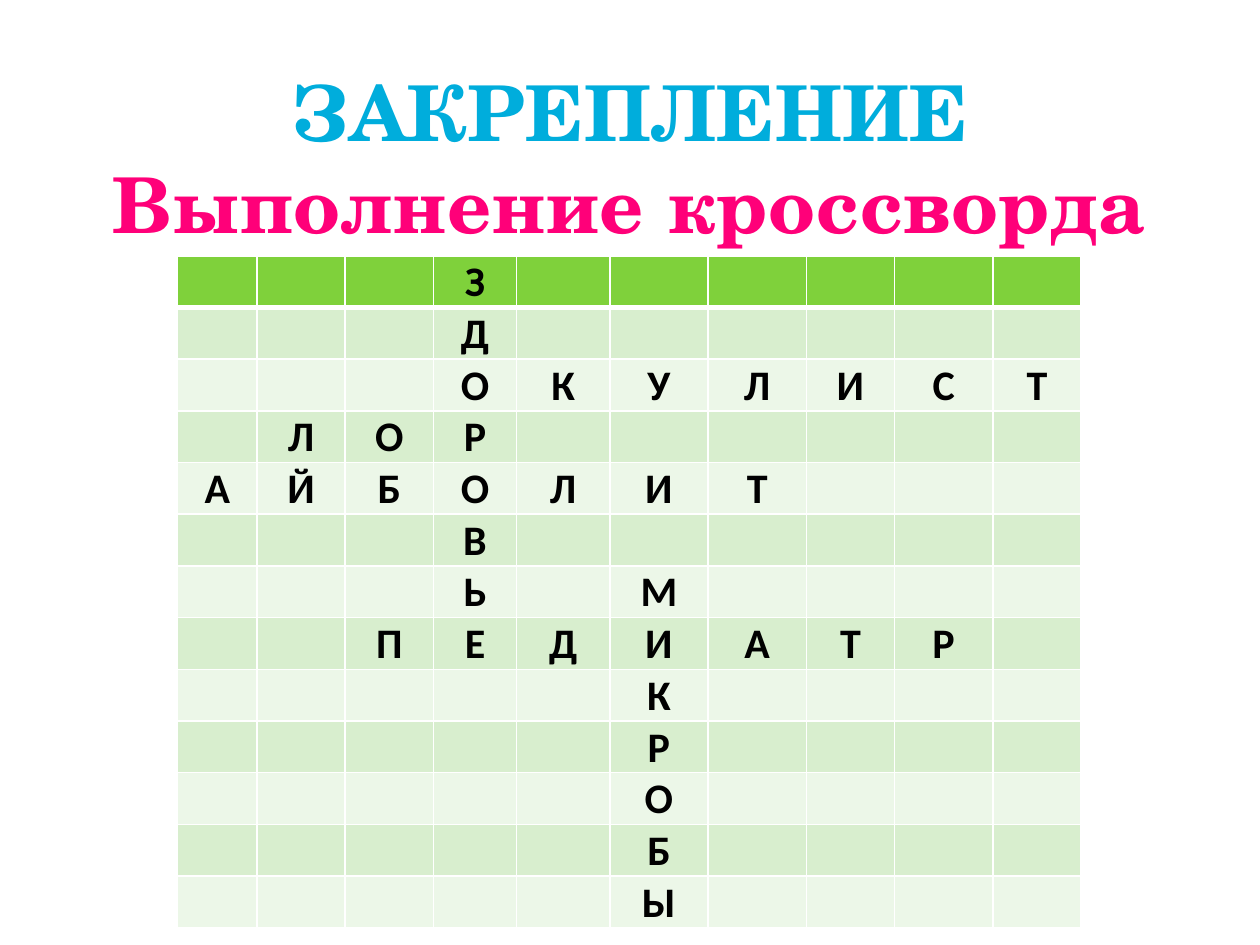
"""Crossword slide: a two-line heading above a 13 by 10 letter grid."""
from lxml import etree
from pptx import Presentation
from pptx.dml.color import RGBColor
from pptx.enum.text import MSO_ANCHOR, PP_ALIGN
from pptx.oxml.ns import qn
from pptx.util import Inches, Pt

CENTER = PP_ALIGN.CENTER
MIDDLE, BOTTOM = MSO_ANCHOR.MIDDLE, MSO_ANCHOR.BOTTOM


def rgb(value):
    return RGBColor.from_string(value)


def add_border(cell, side, width):
    ln = etree.SubElement(cell._tc.get_or_add_tcPr(), qn(f"a:ln{side}"), w=str(Pt(width)))
    fill = etree.SubElement(ln, qn("a:solidFill"))
    etree.SubElement(fill, qn("a:srgbClr"), val="FFFFFF")


prs = Presentation()
prs.slide_width, prs.slide_height = Inches(10), Inches(7.5)
s = prs.slides.add_slide(prs.slide_layouts[6])

sp = s.shapes.add_textbox(Inches(0.5), Inches(0.3), Inches(9), Inches(1.89))
tf = sp.text_frame
tf.word_wrap = True
tf.vertical_anchor = MIDDLE
p = tf.paragraphs[0]
p.alignment = CENTER
p.font.size, p.font.bold, p.font.name = Pt(44), True, "TeX Gyre Schola"
r = p.add_run()
r.text = "ЗАКРЕПЛЕНИЕ"
r.font.color.rgb = rgb("00ADDC")
p.add_line_break()
r = p.add_run()
r.text = "Выполнение кроссворда"
r.font.color.rgb = rgb("FF0079")
r._r.get_or_add_rPr().set("spc", "50")

widths = [0.63, 0.7, 0.7, 0.66, 0.74, 0.78, 0.78, 0.7, 0.78, 0.7]
n_rows, row_height = 13, 0.41
words = [
    ("ЗДОРОВЬЕ", 0, 3, True),
    ("МИКРОБЫ", 6, 5, True),
    ("ОКУЛИСТ", 2, 3, False),
    ("ЛОР", 3, 1, False),
    ("АЙБОЛИТ", 4, 0, False),
    ("ПЕДИАТР", 7, 2, False),
]
letters = {}
for word, row, col, down in words:
    for i, letter in enumerate(word):
        letters[(row + i, col) if down else (row, col + i)] = letter

table = s.shapes.add_table(n_rows, len(widths), Inches(1.41), Inches(2.03),
                           Inches(sum(widths)), Inches(n_rows * row_height)).table
for column, width in zip(table.columns, widths):
    column.width = Inches(width)
for row in range(n_rows):
    table.rows[row].height = Inches(row_height)
    for col in range(len(widths)):
        cell = table.cell(row, col)
        for side in "LRTB":
            thick = (row, side) in [(0, "B"), (1, "T")]
            add_border(cell, side, 3 if thick else 1)
        cell.fill.solid()
        color = "7FD13B" if row == 0 else "D8EECE" if row % 2 else "ECF7E8"
        cell.fill.fore_color.rgb = rgb(color)
        if (row, col) in letters:
            cell.margin_left = cell.margin_right = cell.margin_top = Inches(0.01)
            cell.margin_bottom = 0
            cell.vertical_anchor = BOTTOM
            p = cell.text_frame.paragraphs[0]
            p.text = letters[row, col]
            p.alignment = CENTER
            p.font.size, p.font.bold, p.font.name = Pt(24), True, "Calibri"
            p.font.color.rgb = rgb("000000")

prs.save("out.pptx")
